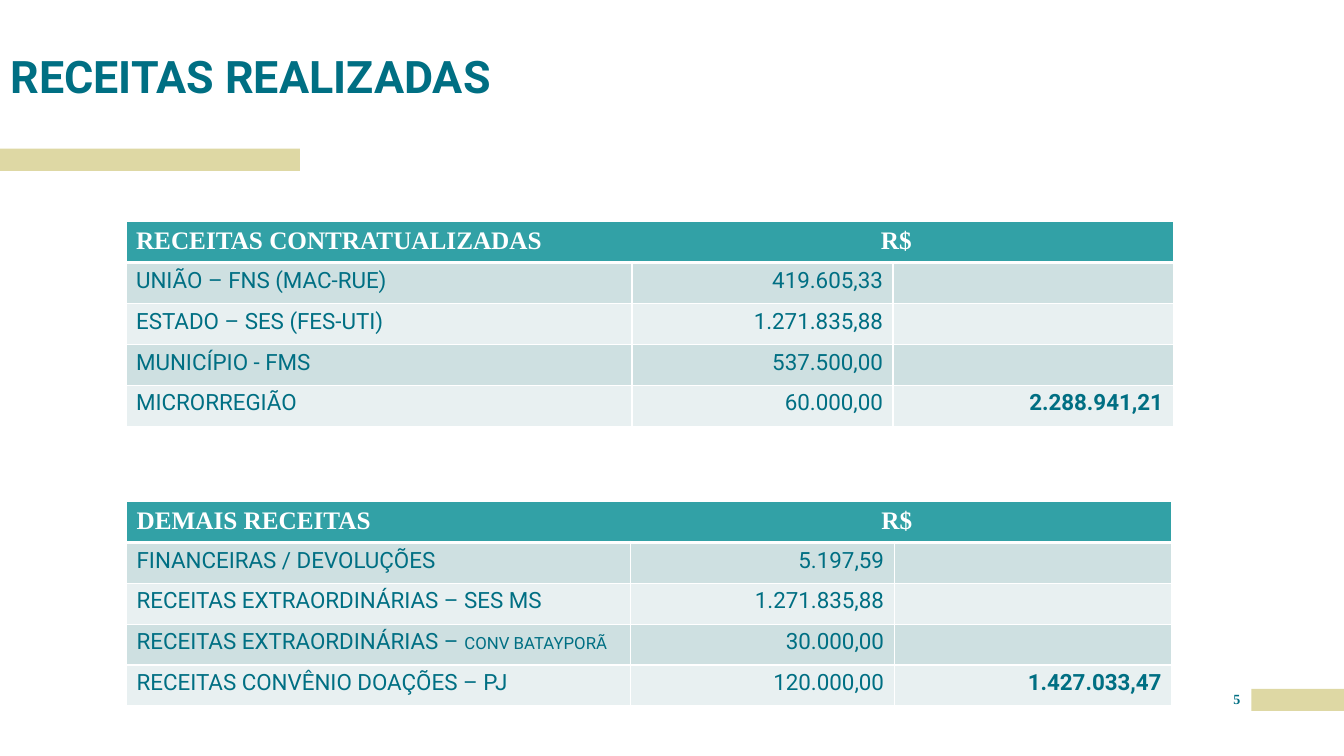
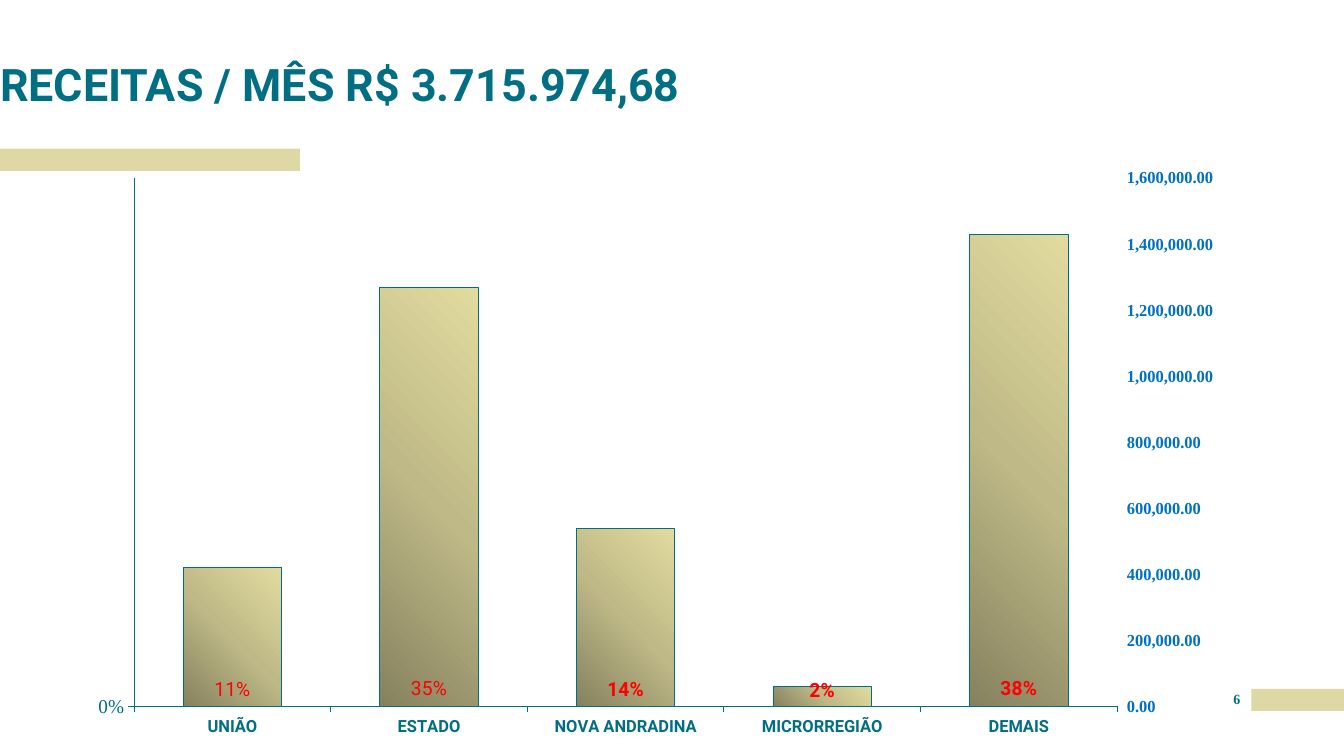
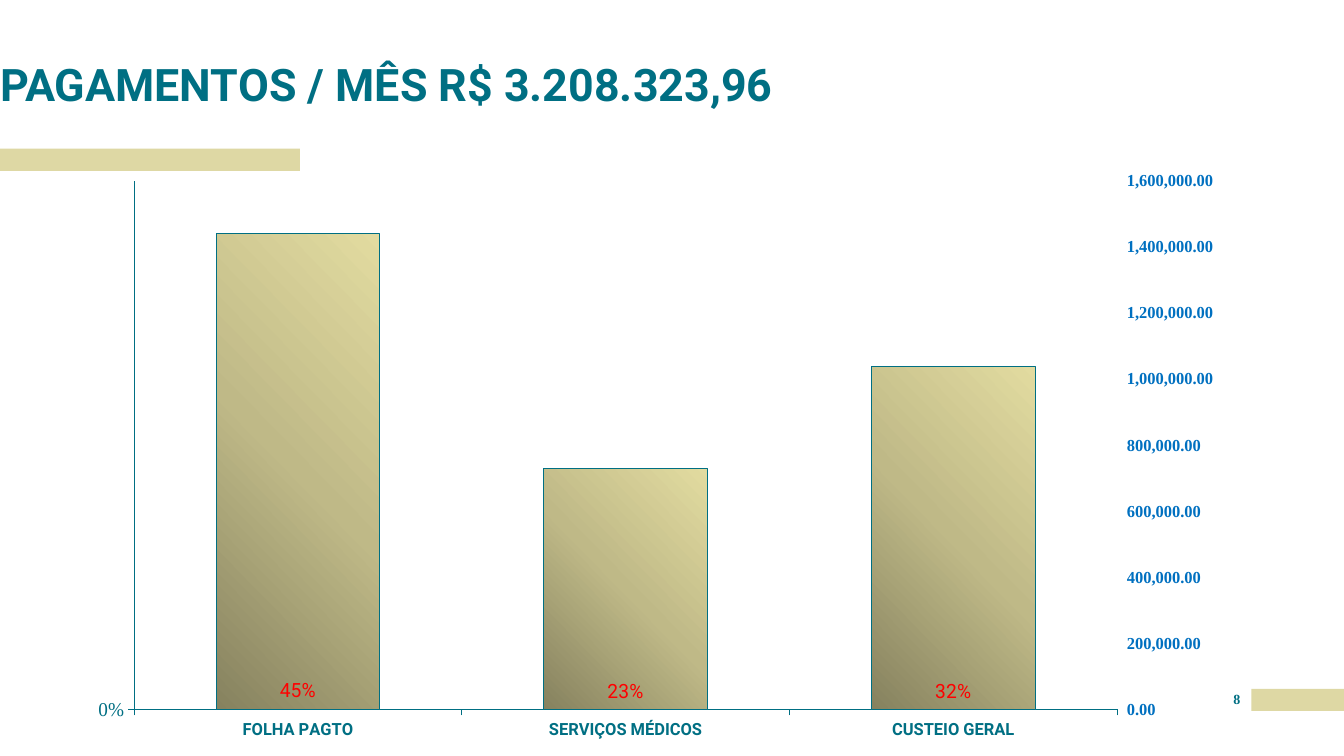
import copy
from dataclasses import dataclass

import pptx
import pptx.chart.axis
import pptx.chart.data
import pptx.dml.color
import pptx.enum.chart
import pptx.enum.shapes
import pptx.enum.text
import pptx.oxml
import pptx.oxml.ns
import pptx.util

Pt = pptx.util.Pt
Box = tuple[float, float, float, float]  # left, top, width, height in points


# ---- Theme and data types ----
@dataclass(frozen=True)
class Theme:
    teal: str = "006F83"
    sand: str = "DED8A4"
    header: str = "32A1A6"
    bands: tuple[str, str] = ("CEE0E1", "E8F0F1")
    white: str = "FFFFFF"
    grid: str = "A5E1E4"
    blue: str = "0070C0"
    red: str = "FF0000"
    gradient: tuple[tuple[int, str], ...] = ((0, "86825F"), (50, "BFB987"), (100, "E2DBA0"))
    sans: str = "Roboto"
    serif: str = "Times New Roman"
    title_size: float = 32
    header_size: float = 18
    body_size: float = 16
    label_size: float = 14
    small_size: float = 12
    page_size: float = 10


T = Theme()


@dataclass(frozen=True)
class RevenueRow:
    label: str
    amount: str
    total: str = ""
    detail: str = ""


@dataclass(frozen=True)
class RevenueTable:
    heading: str
    box: Box
    columns: tuple[float, float, float]
    rows: tuple[RevenueRow, ...]


@dataclass(frozen=True)
class Bar:
    category: str
    share: float
    amount: float
    label: str = ""


@dataclass(frozen=True)
class ChartSlide:
    title: str
    page: str
    top: float
    bars: tuple[Bar, ...]


TABLES = (
    RevenueTable("RECEITAS CONTRATUALIZADAS", (90, 158.4, 748, 146), (361.4, 186.5, 200.1), (
        RevenueRow("UNIÃO – FNS (MAC-RUE)", "419.605,33"),
        RevenueRow("ESTADO – SES (FES-UTI)", "1.271.835,88"),
        RevenueRow("MUNICÍPIO - FMS", "537.500,00"),
        RevenueRow("MICRORREGIÃO", "60.000,00", "2.288.941,21"),
    )),
    RevenueTable("DEMAIS RECEITAS", (90.4, 358.2, 746.6, 146), (360, 188.3, 198.3), (
        RevenueRow("FINANCEIRAS / DEVOLUÇÕES", "5.197,59"),
        RevenueRow("RECEITAS EXTRAORDINÁRIAS – SES MS", "1.271.835,88"),
        RevenueRow("RECEITAS EXTRAORDINÁRIAS – ", "30.000,00", detail="CONV BATAYPORÃ"),
        RevenueRow("RECEITAS CONVÊNIO DOAÇÕES – PJ", "120.000,00", "1.427.033,47"),
    )),
)

CHARTS = (
    ChartSlide("RECEITAS / MÊS R$ 3.715.974,68", "6", 114.5, (
        Bar("UNIÃO", 0.11, 420000, "11%"),
        Bar("ESTADO", 0.34, 1270000, "35%"),
        Bar("NOVA ANDRADINA", 0.14, 540000),
        Bar("MICRORREGIÃO", 0.02, 60000),
        Bar("DEMAIS", 0.38, 1430000),
    )),
    ChartSlide("PAGAMENTOS / MÊS R$ 3.208.323,96", "8", 116.6, (
        Bar("FOLHA PAGTO", 0.45, 1440000, "45%"),
        Bar("SERVIÇOS MÉDICOS", 0.23, 730000, "23%"),
        Bar("CUSTEIO GERAL", 0.32, 1040000, "32%"),
    )),
)
CHART_LEFT, CHART_WIDTH, CHART_HEIGHT = 23, 843.8, 416.9
PLOT: Box = (74.3, 12.9, 716.4, 377.3)  # inside the chart frame


# ---- Text and frame helpers ----
def rgb(color: str) -> pptx.dml.color.RGBColor:
    return pptx.dml.color.RGBColor.from_string(color)


def style_font(font, *, size: float, name: str = T.sans, color: str = T.teal,
               bold: bool = False) -> None:
    font.size, font.name, font.bold = Pt(size), name, bold
    font.color.rgb = rgb(color)


def add_text(p, text: str, **fmt) -> None:
    r = p.add_run()
    r.text = text
    style_font(r.font, **fmt)


def points(box: Box) -> list[int]:
    return [Pt(v) for v in box]


def bare_frame(tf):
    tf.margin_left = tf.margin_top = tf.margin_right = tf.margin_bottom = 0
    tf.word_wrap = True
    tf.auto_size = pptx.enum.text.MSO_AUTO_SIZE.NONE
    return tf


def new_slide(prs, title: str, title_box: Box, page: str):
    s = prs.slides.add_slide(prs.slide_layouts[5])
    # Sand bands
    for box in ((893.8, 492, 66.2, 15.8), (0, 106.2, 214.2, 15.8)):
        sp = s.shapes.add_shape(pptx.enum.shapes.MSO_SHAPE.RECTANGLE, *points(box))
        sp.shadow.inherit = False
        sp.fill.solid()
        sp.fill.fore_color.rgb = rgb(T.sand)
        sp.line.fill.background()
    # Title
    sp = s.shapes.title
    sp.left, sp.top, sp.width, sp.height = points(title_box)
    tf = bare_frame(sp.text_frame)
    tf.vertical_anchor = pptx.enum.text.MSO_ANCHOR.BOTTOM
    p = tf.paragraphs[0]
    p.alignment = pptx.enum.text.PP_ALIGN.LEFT
    p.line_spacing = 0.9
    add_text(p, title, size=T.title_size, bold=True)
    # Page number
    sp = s.shapes.add_textbox(*points((873, 493.2, 20.9, 18)))
    p = bare_frame(sp.text_frame).paragraphs[0]
    p.alignment = pptx.enum.text.PP_ALIGN.CENTER
    add_text(p, page, size=T.page_size, name=T.serif, bold=True)
    return s


# ---- Tables ----
def style_cell(cell, row: int) -> None:
    tc_pr = cell._tc.get_or_add_tcPr()
    heavy_side = {0: "B", 1: "T"}.get(row)
    for side in "LRTB":
        width = Pt(3 if side == heavy_side else 1)
        tc_pr.append(pptx.oxml.parse_xml(
            f'<a:ln{side} {pptx.oxml.ns.nsdecls("a")} w="{width}"><a:solidFill>'
            f'<a:srgbClr val="{T.white}"/></a:solidFill></a:ln{side}>'))
    cell.fill.solid()
    cell.fill.fore_color.rgb = rgb(T.bands[(row - 1) % 2] if row else T.header)


def add_revenue_table(s, spec: RevenueTable) -> None:
    n_rows = len(spec.rows) + 1
    table = s.shapes.add_table(n_rows, len(spec.columns), *points(spec.box)).table
    for column, width in zip(table.columns, spec.columns):
        column.width = Pt(width)
    for i, row in enumerate(table.rows):
        row.height = Pt(spec.box[3] / n_rows)
        for cell in row.cells:
            style_cell(cell, i)
    # Heading with the currency on a tab stop
    table.cell(0, 0).merge(table.cell(0, len(spec.columns) - 1))
    p = table.cell(0, 0).text_frame.paragraphs[0]
    add_text(p, f"{spec.heading}\tR$", size=T.header_size, name=T.serif,
             color=T.white, bold=True)
    p._p.get_or_add_pPr().append(pptx.oxml.parse_xml(
        f'<a:tabLst {pptx.oxml.ns.nsdecls("a")}><a:tab pos="{Pt(532)}" algn="l"/></a:tabLst>'))
    # Body
    for i, entry in enumerate(spec.rows, 1):
        label, amount, total = (table.cell(i, j).text_frame.paragraphs[0] for j in range(3))
        add_text(label, entry.label, size=T.body_size)
        if entry.detail:
            add_text(label, entry.detail, size=T.small_size)
        amount.alignment = total.alignment = pptx.enum.text.PP_ALIGN.RIGHT
        add_text(amount, entry.amount, size=T.body_size)
        if entry.total:
            add_text(total, entry.total, size=T.body_size, bold=True)


# ---- Charts ----
def split_to_right_axis(chart) -> pptx.chart.axis.ValueAxis:
    """Move the second series to its own bar group on a right-hand axis."""
    left = chart.element.xpath(".//c:barChart")[0]
    right = copy.deepcopy(left)
    left.remove(left.xpath("c:ser")[1])
    right.remove(right.xpath("c:ser")[0])
    left.addnext(right)

    cat, val = (chart.element.xpath(f".//c:{tag}")[0] for tag in ("catAx", "valAx"))
    cat_right, val_right = copy.deepcopy(cat), copy.deepcopy(val)
    val.addnext(val_right)
    val_right.addnext(cat_right)
    ids = ("50001", "50002")
    for node, new_id in zip(right.xpath("c:axId"), ids):
        node.set("val", new_id)
    for axis, own, cross in ((cat_right, *ids), (val_right, *reversed(ids))):
        axis.xpath("c:axId")[0].set("val", own)
        axis.xpath("c:crossAx")[0].set("val", cross)
    val_right.xpath("c:axPos")[0].set("val", "r")
    val_right.xpath("c:crosses")[0].set("val", "max")
    pptx.chart.axis.CategoryAxis(cat_right).visible = False
    return pptx.chart.axis.ValueAxis(val_right)


def style_line(line, color: str) -> None:
    line.color.rgb = rgb(color)
    line.width = Pt(0.75)


def style_axis(axis, *, number_format: str = "", line: str = "", **fmt) -> None:
    axis.major_tick_mark = pptx.enum.chart.XL_TICK_MARK.OUTSIDE
    axis.minor_tick_mark = pptx.enum.chart.XL_TICK_MARK.NONE
    style_font(axis.tick_labels.font, **fmt)
    if number_format:
        axis.tick_labels.number_format = number_format
        axis.tick_labels.number_format_is_linked = False
    if line:
        style_line(axis.format.line, line)
    else:
        axis.format.line.fill.background()


def scale_axis(axis, top: float, step: float) -> None:
    axis.minimum_scale, axis.maximum_scale, axis.major_unit = 0, top, step


def fill_gradient(series) -> None:
    series.format.fill.gradient()
    old = series._element.xpath("c:spPr/a:gradFill")[0]
    stops = "".join(f'<a:gs pos="{pos * 1000}"><a:srgbClr val="{color}"/></a:gs>'
                    for pos, color in T.gradient)
    old.getparent().replace(old, pptx.oxml.parse_xml(
        f'<a:gradFill {pptx.oxml.ns.nsdecls("a")} rotWithShape="1"><a:gsLst>{stops}</a:gsLst>'
        '<a:path path="circle"><a:fillToRect t="100000" r="100000"/></a:path>'
        '<a:tileRect l="-100000" b="-100000"/></a:gradFill>'))


def set_plot_layout(chart) -> None:
    area = chart.element.xpath(".//c:plotArea")[0]
    for old in area.xpath("c:layout"):
        area.remove(old)
    frame = (CHART_WIDTH, CHART_HEIGHT) * 2
    sizes = "".join(f'<c:{k} val="{v / full:.4f}"/>' for k, v, full in zip("xywh", PLOT, frame))
    area.insert(0, pptx.oxml.parse_xml(
        f'<c:layout {pptx.oxml.ns.nsdecls("c")}><c:manualLayout><c:layoutTarget val="inner"/>'
        f'<c:xMode val="edge"/><c:yMode val="edge"/>{sizes}</c:manualLayout></c:layout>'))


def label_shares(series, bars: tuple[Bar, ...]) -> None:
    outside = pptx.enum.chart.XL_LABEL_POSITION.OUTSIDE_END
    labels = series.data_labels
    labels.show_value = True
    labels.number_format, labels.number_format_is_linked = "0%", False
    labels.position = outside
    style_font(labels.font, size=T.label_size, color=T.red, bold=True)
    for i, bar in enumerate(bars):
        if bar.label:
            label = series.points[i].data_label
            add_text(label.text_frame.paragraphs[0], bar.label, size=T.label_size, color=T.red)
            label.position = outside


def add_month_chart(s, spec: ChartSlide) -> None:
    data = pptx.chart.data.CategoryChartData()
    data.categories = [bar.category for bar in spec.bars]
    data.add_series("Series 1", [bar.share for bar in spec.bars], "0%")
    data.add_series("Series 2", [bar.amount for bar in spec.bars], "#,##0.00")
    box = (CHART_LEFT, spec.top, CHART_WIDTH, CHART_HEIGHT)
    chart = s.shapes.add_chart(pptx.enum.chart.XL_CHART_TYPE.COLUMN_CLUSTERED,
                               *points(box), data).chart
    chart.has_legend = chart.has_title = False
    style_font(chart.font, size=T.page_size, name=T.serif)
    plot = chart.plots[0]
    plot.gap_width = plot.overlap = 100
    plot.vary_by_categories = False
    left_axis = chart.value_axis
    right_axis = split_to_right_axis(chart)
    set_plot_layout(chart)

    # Axes
    style_axis(chart.category_axis, size=T.small_size, bold=True, line=T.teal)
    style_axis(left_axis, size=T.label_size, name=T.serif, line=T.teal, number_format="0%")
    scale_axis(left_axis, 100, 10000)
    left_axis.has_major_gridlines = True
    style_line(left_axis.major_gridlines.format.line, T.grid)
    style_axis(right_axis, size=T.small_size, name=T.serif, color=T.blue, bold=True,
               number_format="#,##0.00")
    scale_axis(right_axis, 1600000, 200000)
    right_axis.has_major_gridlines = False

    # Series
    shares, amounts = (group.series[0] for group in chart.plots)
    shares.format.fill.solid()
    shares.format.fill.fore_color.rgb = rgb(T.teal)
    label_shares(shares, spec.bars)
    fill_gradient(amounts)
    style_line(amounts.format.line, T.teal)


# ---- Presentation ----
def main() -> None:
    prs = pptx.Presentation()
    prs.slide_width, prs.slide_height = Pt(960), Pt(540)
    s = new_slide(prs, "RECEITAS REALIZADAS", (7.6, 0, 672.5, 73.4), "5")
    for table in TABLES:
        add_revenue_table(s, table)
    for chart in CHARTS:
        s = new_slide(prs, chart.title, (0, 32.6, 614.2, 46.8), chart.page)
        add_month_chart(s, chart)
    prs.save("out.pptx")


if __name__ == "__main__":
    main()
